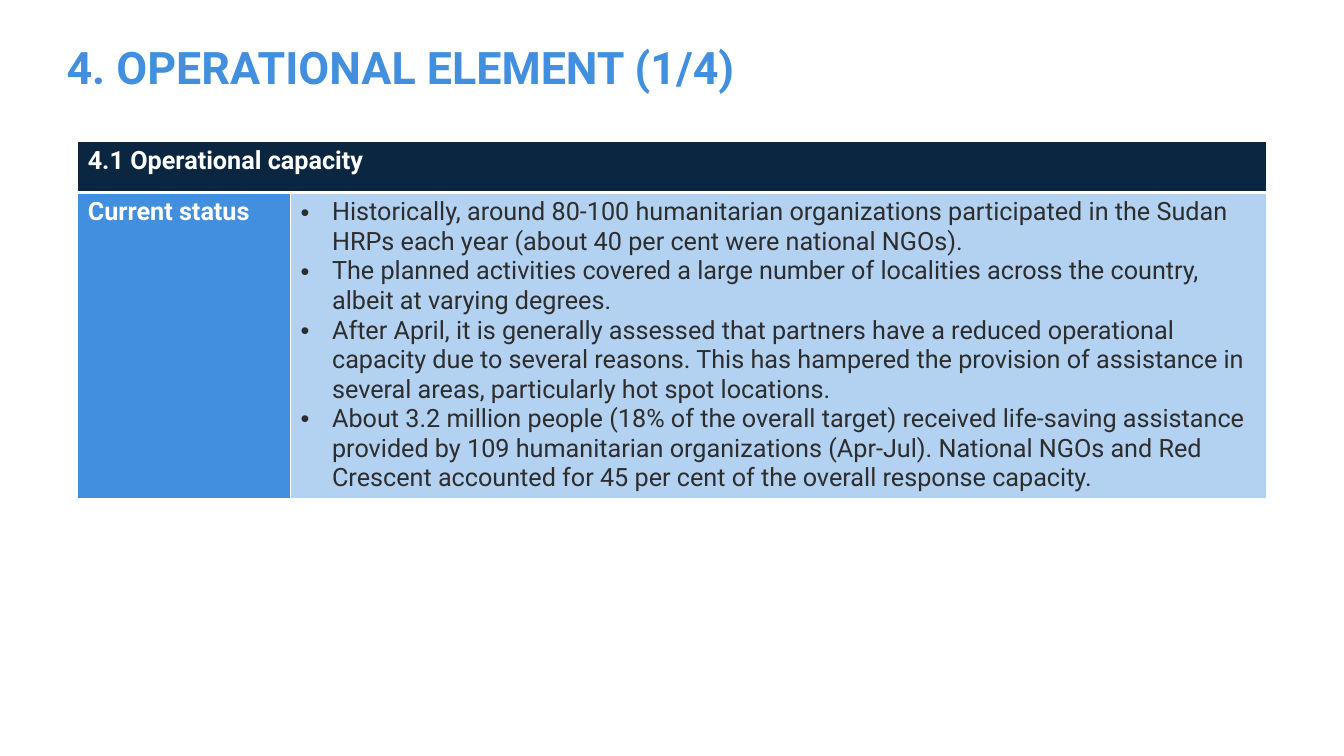
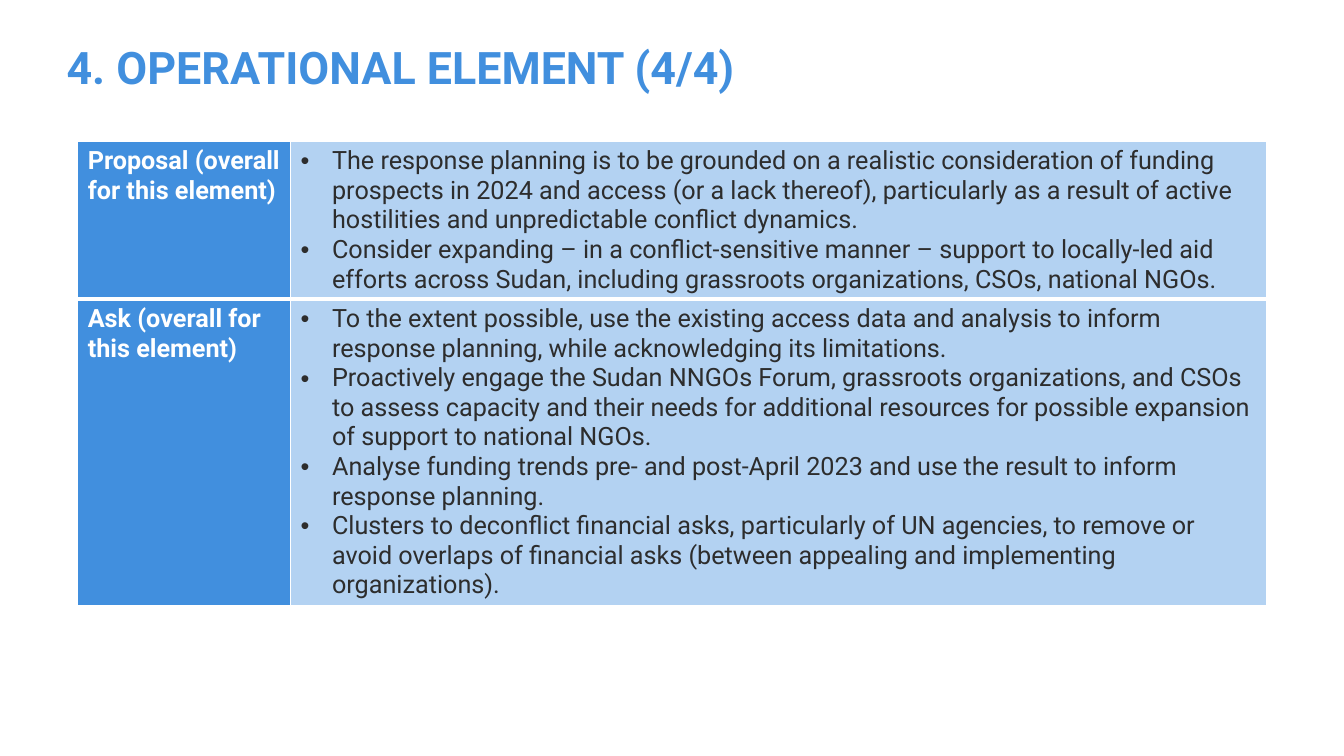
from lxml import etree
from pptx import Presentation
from pptx.dml.color import RGBColor
from pptx.enum.text import MSO_ANCHOR, MSO_AUTO_SIZE
from pptx.oxml.ns import qn
from pptx.util import Pt

MIDDLE = MSO_ANCHOR.MIDDLE
NO_AUTOFIT = MSO_AUTO_SIZE.NONE

WHITE = RGBColor(0xFF, 0xFF, 0xFF)
NAVY = RGBColor(0x0B, 0x26, 0x41)
BLUE = RGBColor(0x41, 0x8F, 0xDE)
PALE_BLUE = RGBColor(0xB3, 0xD2, 0xF2)
DARK_GREY = RGBColor(0x2D, 0x2D, 0x2D)

FONT = "Roboto"
TITLE_ONLY = 5
TABLE_LEFT, TABLE_TOP = 55.5, 101
COLUMN_WIDTHS = (152, 697.5)
BULLET_INDENT = 22.5
THIN_BORDER, THICK_BORDER = 1, 3

# Each row: label, bullet points (none for a heading across the table), height
SLIDES = [
    ("4. OPERATIONAL ELEMENT (1/4)", [
        ("4.1 Operational capacity", [], 36.5),
        ("Current status", [
            "Historically, around 80-100 humanitarian organizations participated in the Sudan "
            "HRPs each year (about 40 per cent were national NGOs).",
            "The planned activities covered a large number of localities across the country, "
            "albeit at varying degrees.",
            "After April, it is generally assessed that partners have a reduced operational "
            "capacity due to several reasons. This has hampered the provision of assistance in "
            "several areas, particularly hot spot locations.",
            "About 3.2 million people (18% of the overall target) received life-saving assistance "
            "provided by 109 humanitarian organizations (Apr-Jul). National NGOs and Red "
            "Crescent accounted for 45 per cent of the overall response capacity.",
        ], 218),
    ]),
    ("4. OPERATIONAL ELEMENT (4/4)", [
        ("Proposal (overall for this element)", [
            "The response planning is to be grounded on a realistic consideration of funding "
            "prospects in 2024 and access (or a lack thereof), particularly as a result of active "
            "hostilities and unpredictable conflict dynamics.",
            "Consider expanding – in a conflict-sensitive manner – support to locally-led aid "
            "efforts across Sudan, including grassroots organizations, CSOs, national NGOs.",
        ], 112.5),
        ("Ask (overall for this element)", [
            "To the extent possible, use the existing access data and analysis to inform "
            "response planning, while acknowledging its limitations.",
            "Proactively engage the Sudan NNGOs Forum, grassroots organizations, and CSOs "
            "to assess capacity and their needs for additional resources for possible expansion "
            "of support to national NGOs.",
            "Analyse funding trends pre- and post-April 2023 and use the result to inform "
            "response planning.",
            "Clusters to deconflict financial asks, particularly of UN agencies, to remove or "
            "avoid overlaps of financial asks (between appealing and implementing "
            "organizations).",
        ], 218),
    ]),
]


def write_text(text_frame, lines, size=18, color=WHITE, bold=True, bullets=False, spacing=None):
    for index, line in enumerate(lines):
        paragraph = text_frame.add_paragraph() if index else text_frame.paragraphs[0]
        paragraph.line_spacing = spacing
        run = paragraph.add_run()
        run.text = line
        run.font.name = FONT
        run.font.size = Pt(size)
        run.font.bold = bold
        run.font.color.rgb = color
        if bullets:
            properties = paragraph._p.get_or_add_pPr()
            properties.set("marL", str(Pt(BULLET_INDENT)))
            properties.set("indent", str(-Pt(BULLET_INDENT)))
            etree.SubElement(properties, qn("a:buFont"), typeface="Arial")
            etree.SubElement(properties, qn("a:buChar"), char="•")


def style_cell(cell, fill, top, bottom):
    """Fill a cell and give it white borders, with top and bottom widths in points."""
    properties = cell._tc.get_or_add_tcPr()
    borders = {"a:lnL": THIN_BORDER, "a:lnR": THIN_BORDER, "a:lnT": top, "a:lnB": bottom}
    for tag, width in borders.items():
        border = etree.SubElement(properties, qn(tag), w=str(Pt(width)))
        solid_fill = etree.SubElement(border, qn("a:solidFill"))
        etree.SubElement(solid_fill, qn("a:srgbClr"), val=str(WHITE))
    cell.fill.solid()
    cell.fill.fore_color.rgb = fill


presentation = Presentation()
presentation.slide_width, presentation.slide_height = Pt(960), Pt(540)

for title_text, rows in SLIDES:
    slide = presentation.slides.add_slide(presentation.slide_layouts[TITLE_ONLY])

    title = slide.shapes.title
    title.left, title.top, title.width, title.height = Pt(47.5), Pt(33), Pt(675.5), Pt(34.5)
    frame = title.text_frame
    frame.margin_left = frame.margin_top = frame.margin_right = frame.margin_bottom = 0
    frame.vertical_anchor = MIDDLE
    frame.auto_size = NO_AUTOFIT
    frame.word_wrap = True
    write_text(frame, [title_text], size=32, color=BLUE, spacing=0.9)
    frame.paragraphs[0].alignment = 1

    table = slide.shapes.add_table(
        len(rows), len(COLUMN_WIDTHS), Pt(TABLE_LEFT), Pt(TABLE_TOP),
        Pt(sum(COLUMN_WIDTHS)), Pt(sum(height for _, _, height in rows))).table
    for column, width in zip(table.columns, COLUMN_WIDTHS):
        column.width = Pt(width)

    for index, (label, points, height) in enumerate(rows):
        table.rows[index].height = Pt(height)
        label_cell, points_cell = table.cell(index, 0), table.cell(index, 1)
        top = THICK_BORDER if index else THIN_BORDER
        bottom = THIN_BORDER if index else THICK_BORDER
        style_cell(label_cell, BLUE if points else NAVY, top, bottom)
        style_cell(points_cell, PALE_BLUE if points else NAVY, top, bottom)
        write_text(label_cell.text_frame, [label])
        if points:
            write_text(points_cell.text_frame, points, color=DARK_GREY, bold=False, bullets=True)
        else:
            label_cell.merge(points_cell)

presentation.save("out.pptx")
